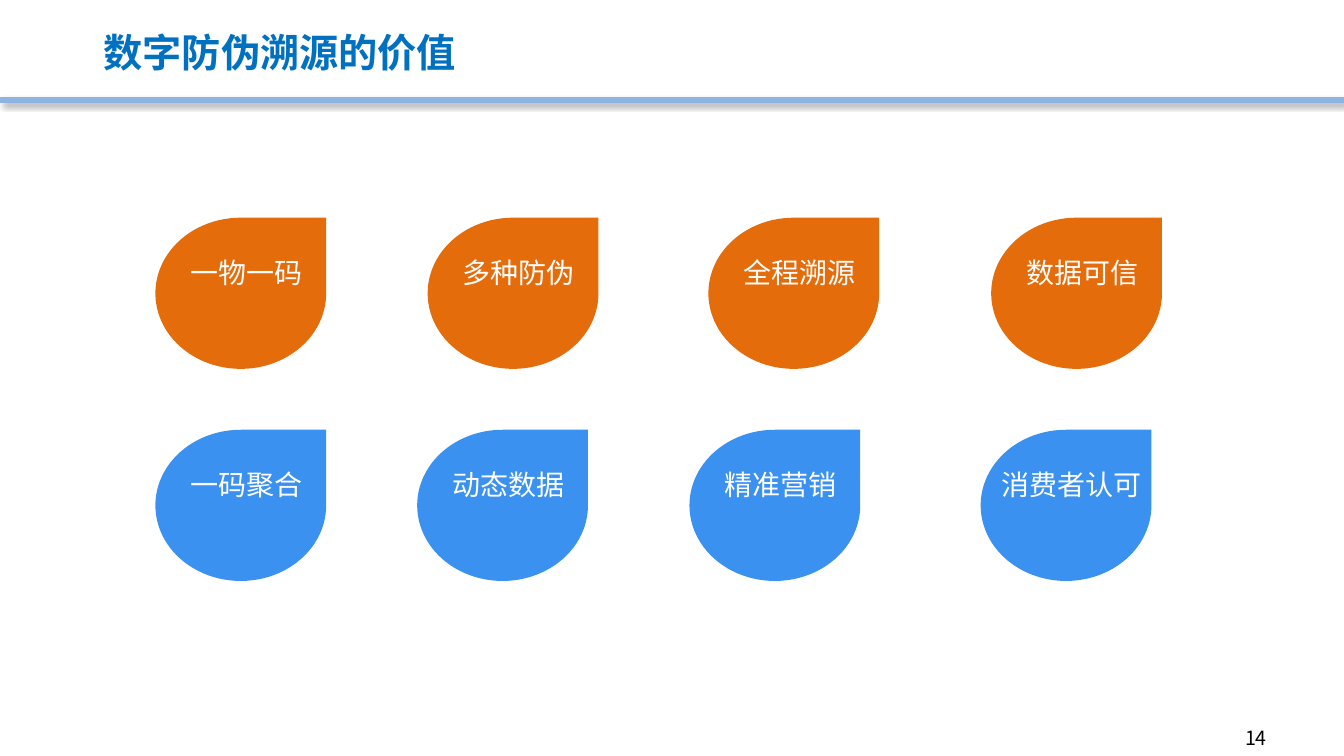
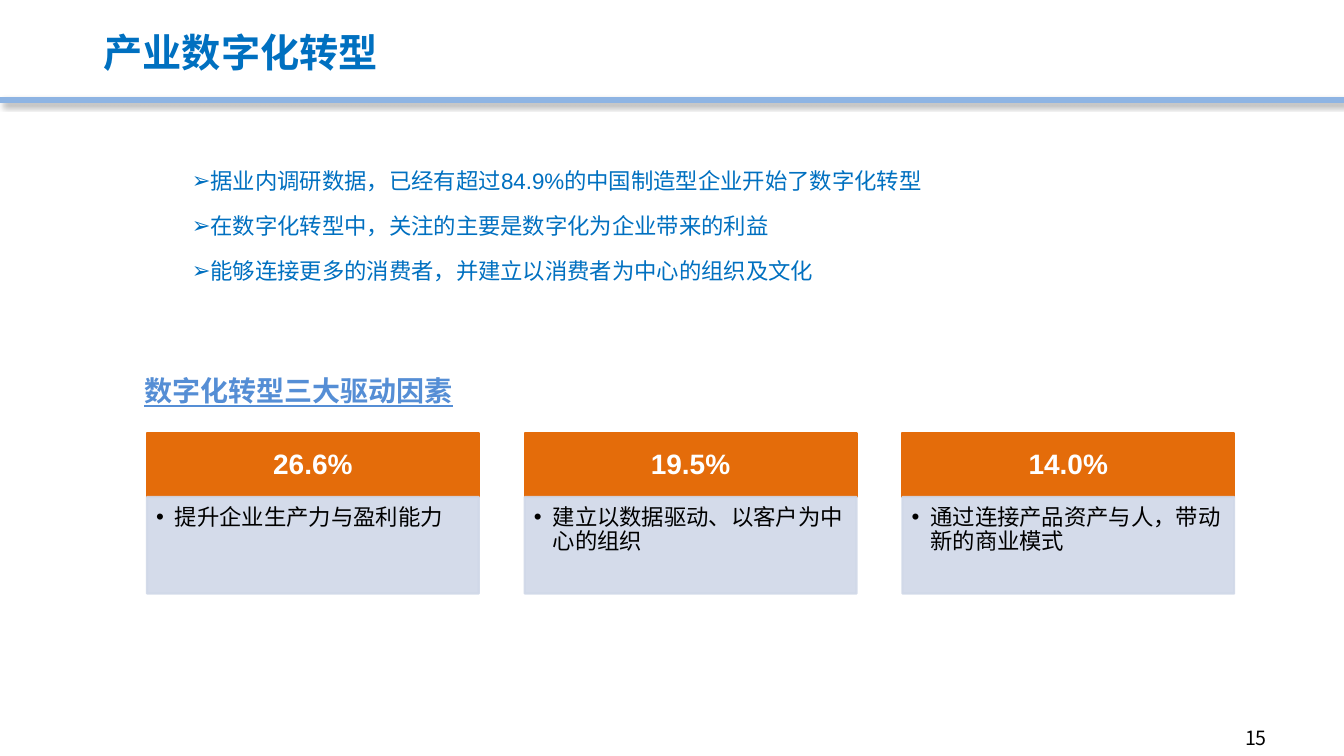
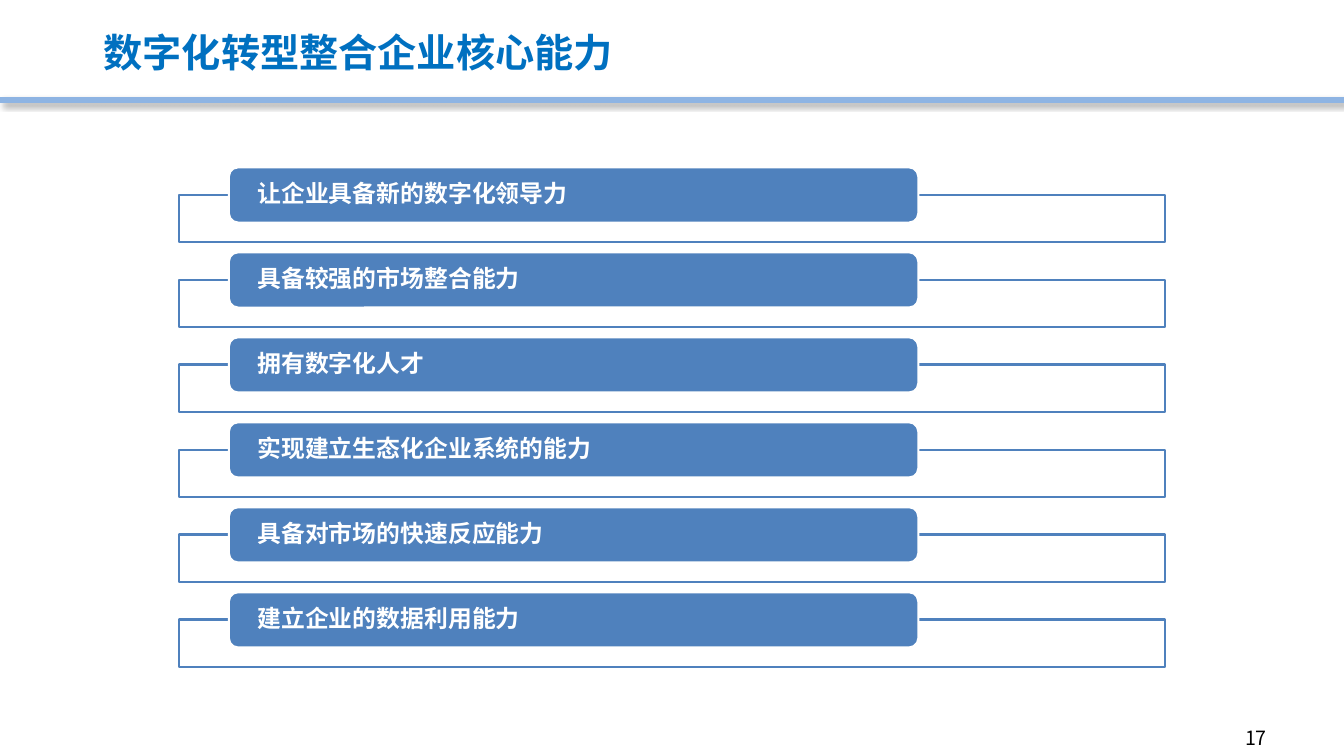
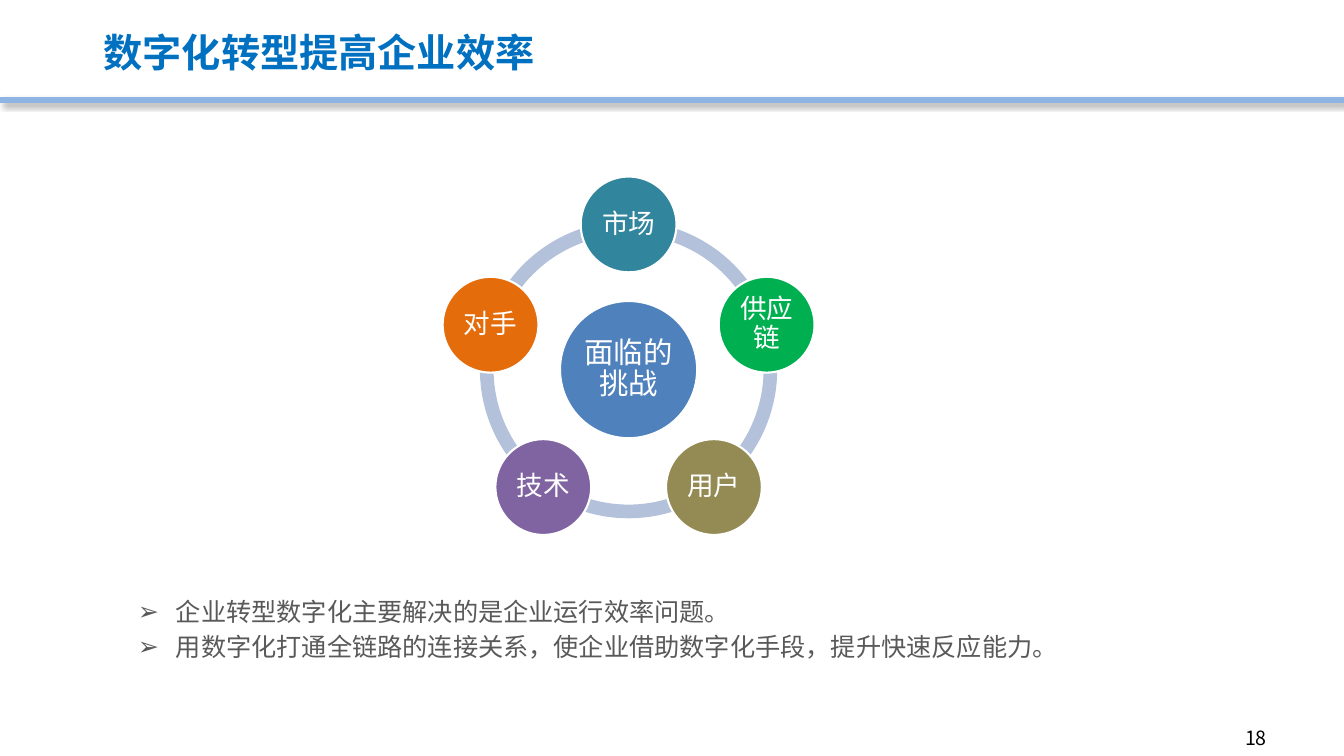
import math

from lxml import etree
from pptx import Presentation
from pptx.dml.color import RGBColor
from pptx.enum.shapes import MSO_CONNECTOR, MSO_SHAPE
from pptx.enum.text import MSO_ANCHOR, PP_ALIGN
from pptx.oxml.ns import qn
from pptx.util import Pt

LEFT, CENTER, RIGHT = PP_ALIGN.LEFT, PP_ALIGN.CENTER, PP_ALIGN.RIGHT
TOP, MIDDLE = MSO_ANCHOR.TOP, MSO_ANCHOR.MIDDLE
RECT, ROUNDED, OVAL = MSO_SHAPE.RECTANGLE, MSO_SHAPE.ROUNDED_RECTANGLE, MSO_SHAPE.OVAL
TEARDROP, ARC = MSO_SHAPE.TEAR, MSO_SHAPE.BLOCK_ARC
STRAIGHT = MSO_CONNECTOR.STRAIGHT

SLIDE_W, SLIDE_H = 960, 540
SANS, CJK = "Arial", "Noto Sans CJK SC"
DEFAULT_INSETS = (7.2, 3.6, 7.2, 3.6)

COLORS = {
    "title": "0070C0", "band": "8EB4E3", "heading": "558ED5",
    "orange": "E46C0A", "sky": "3A91F0", "blue": "4F81BD",
    "card": "D0D8E8", "ring": "B3C1DB", "teal": "31859C",
    "green": "00B050", "olive": "948A54", "purple": "8064A2",
    "gray": "595959", "black": "000000", "white": "FFFFFF",
}

VALUE_ROWS = [
    ("orange", 155.5, [(111, "一物一码"), (305.5, "多种防伪"), (506, "全程溯源"), (708, "数据可信")]),
    ("sky", 307, [(111, "一码聚合"), (298, "动态数据"), (492.5, "精准营销"), (700.5, "消费者认可")]),
]
SURVEY_FINDINGS = [
    "据业内调研数据，已经有超过84.9%的中国制造型企业开始了数字化转型",
    "在数字化转型中，关注的主要是数字化为企业带来的利益",
    "能够连接更多的消费者，并建立以消费者为中心的组织及文化",
]
DRIVERS_HEADING = "数字化转型三大驱动因素"
DRIVERS = [
    ("26.6%", "提升企业生产力与盈利能力"),
    ("19.5%", "建立以数据驱动、以客户为中心的组织"),
    ("14.0%", "通过连接产品资产与人，带动新的商业模式"),
]
CAPABILITIES = [
    "让企业具备新的数字化领导力",
    "具备较强的市场整合能力",
    "拥有数字化人才",
    "实现建立生态化企业系统的能力",
    "具备对市场的快速反应能力",
    "建立企业的数据利用能力",
]
CHALLENGE_HUB = "面临的挑战"
CHALLENGES = [
    ("市场", "teal"), ("供应链", "green"), ("用户", "olive"),
    ("技术", "purple"), ("对手", "orange"),
]
EFFICIENCY_POINTS = [
    "企业转型数字化主要解决的是企业运行效率问题。",
    "用数字化打通全链路的连接关系，使企业借助数字化手段，提升快速反应能力。",
]


def rgb(name):
    return RGBColor.from_string(COLORS[name])


def sub(parent, tag, **attributes):
    return etree.SubElement(parent, qn(tag), {k: str(v) for k, v in attributes.items()})


def write(shape, lines, size, color, font=SANS, bold=False, underline=False,
          align=LEFT, anchor=TOP, insets=DEFAULT_INSETS, wrap=True,
          spacing=None, before=0, bullet=None, margin=0, indent=0):
    frame = shape.text_frame
    frame.word_wrap = wrap
    frame.vertical_anchor = anchor
    (frame.margin_left, frame.margin_top,
     frame.margin_right, frame.margin_bottom) = map(Pt, insets)
    for index, line in enumerate(lines):
        paragraph = frame.add_paragraph() if index else frame.paragraphs[0]
        paragraph.alignment = align
        if spacing:
            paragraph.line_spacing = spacing
        if index and before:
            paragraph.space_before = Pt(before)
        if bullet:
            properties = paragraph._p.get_or_add_pPr()
            properties.set("marL", str(Pt(margin)))
            properties.set("indent", str(Pt(indent)))
            sub(properties, "a:buFont", typeface=SANS)
            sub(properties, "a:buChar", char=bullet)
        run = paragraph.add_run()
        run.text = line
        run.font.name = font
        run.font.size = Pt(size)
        run.font.bold = bold
        run.font.underline = underline
        run.font.color.rgb = rgb(color)
        sub(run._r.get_or_add_rPr(), "a:ea", typeface=CJK)


def add_text(slide, box, lines, size, color, **style):
    write(slide.shapes.add_textbox(*map(Pt, box)), lines, size, color, **style)


def add_block(slide, kind, box, fill, line=None, opacity=None):
    block = slide.shapes.add_shape(kind, *map(Pt, box))
    block.shadow.inherit = False
    block.fill.solid()
    block.fill.fore_color.rgb = rgb(fill)
    if line:
        block.line.color.rgb = rgb(line)
        block.line.width = Pt(1.5)
    else:
        block.line.fill.background()
    if opacity:
        for color in block._element.spPr.iter(qn("a:srgbClr")):
            sub(color, "a:alpha", val=opacity * 1000)
    return block


def add_circle(slide, x, y, diameter, fill, label, size):
    circle = add_block(slide, OVAL, (x - diameter / 2, y - diameter / 2, diameter, diameter),
                       fill, "white")
    write(circle, [label], size, "white", align=CENTER, anchor=MIDDLE,
          insets=(2, 2, 2, 2), spacing=0.9)


def add_page(deck, title, number):
    slide = deck.slides.add_slide(deck.slide_layouts[6])
    band = slide.shapes.add_connector(STRAIGHT, 0, Pt(71.5), Pt(SLIDE_W), Pt(71.5))
    band.line.color.rgb = rgb("band")
    band.line.width = Pt(4.5)
    effects = sub(band._element.spPr, "a:effectLst")
    shadow = sub(effects, "a:outerShdw", blurRad=Pt(4), dist=Pt(3), dir=45 * 60000,
                 algn="tl", rotWithShape=0)
    sub(sub(shadow, "a:srgbClr", val=COLORS["black"]), "a:alpha", val=40000)
    add_text(slide, (67, 12, 840, 50.5), [title], 28, "title", bold=True, anchor=MIDDLE)
    add_text(slide, (688, 515, 224, 19.5), [str(number)], 14, "black", font=CJK, align=RIGHT)
    return slide


def build_values(deck):
    slide = add_page(deck, "数字防伪溯源的价值", 14)
    for fill, top, drops in VALUE_ROWS:
        for left, label in drops:
            drop = add_block(slide, TEARDROP, (left, top, 122, 108), fill)
            write(drop, [label], 20, "white", font=CJK, align=CENTER,
                  insets=(8, 11.5, 0, 0), wrap=False)


def build_drivers(deck):
    slide = add_page(deck, "产业数字化转型", 15)
    add_text(slide, (67, 106.5, 760, 100), SURVEY_FINDINGS, 16, "title", spacing=1.5,
             before=3.2, bullet="➢", margin=27, indent=36)
    add_text(slide, (96, 263.5, 279, 31.5), [DRIVERS_HEADING], 20, "heading",
             bold=True, underline=True)
    width, pitch, top, head_h = 237, 269.8, 309.5, 45.5
    for index, (share, reason) in enumerate(DRIVERS):
        left = 105 + index * pitch
        head = add_block(slide, RECT, (left, top, width, head_h), "orange", "orange")
        write(head, [share], 20, "white", bold=True, align=CENTER, anchor=MIDDLE, spacing=0.9)
        body = add_block(slide, RECT, (left, top + head_h, width, 69), "card", "card", 90)
        write(body, [reason], 16, "black", insets=(6.5, 6.5, 8.5, 10), spacing=0.9,
              bullet="•", margin=13.5, indent=-13.5)


def build_capabilities(deck):
    slide = add_page(deck, "数字化转型整合企业核心能力", 17)
    pitch = 60.7
    for index, capability in enumerate(CAPABILITIES):
        top = 119.5 + index * pitch
        add_block(slide, RECT, (128, top + 19.5, 704, 34), "white", "blue")
        bar = add_block(slide, ROUNDED, (163.5, top, 492.5, 39.5), "blue", "white")
        write(bar, [capability], 17, "white", bold=True, anchor=MIDDLE,
              insets=(18.5, 0, 18.5, 0), spacing=0.9)


def build_challenges(deck):
    slide = add_page(deck, "数字化转型提高企业效率", 18)
    add_text(slide, (91.5, 422.5, 714, 50.5), EFFICIENCY_POINTS, 18, "gray", font=CJK,
             before=3.6, bullet="➢", margin=27, indent=-27)
    x, y, orbit, ring = 449, 264, 103.7, 212.4
    step = 360 / len(CHALLENGES)
    angles = [(270 + index * step) % 360 for index in range(len(CHALLENGES))]
    for start in angles:
        arc = add_block(slide, ARC, (x - ring / 2, y - ring / 2, ring, ring), "ring")
        arc.adjustments[0] = start * 0.6
        arc.adjustments[1] = (start + step) % 360 * 0.6
        arc.adjustments[2] = 0.046
    add_circle(slide, x, y, 98, "blue", CHALLENGE_HUB, 21)
    for angle, (label, fill) in zip(angles, CHALLENGES):
        turn = math.radians(angle)
        add_circle(slide, x + orbit * math.cos(turn), y + orbit * math.sin(turn),
                   68.4, fill, label, 19)


def main():
    deck = Presentation()
    deck.slide_width, deck.slide_height = Pt(SLIDE_W), Pt(SLIDE_H)
    for build in (build_values, build_drivers, build_capabilities, build_challenges):
        build(deck)
    deck.save("out.pptx")


if __name__ == "__main__":
    main()
